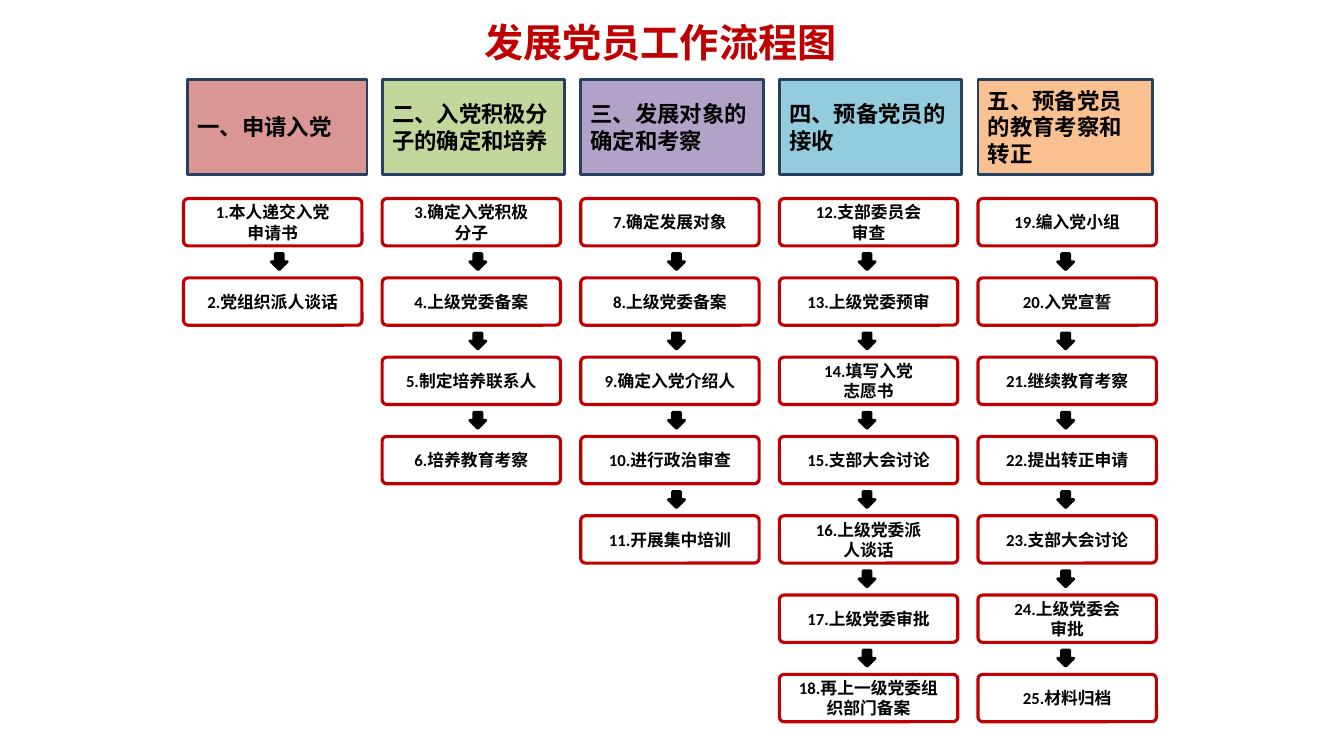
"""Draw the five-stage flow chart for developing party members."""
from lxml import etree
from pptx import Presentation
from pptx import util as u
from pptx.dml.color import RGBColor
from pptx.enum import shapes, text
from pptx.oxml.ns import qn

KIND = shapes.MSO_SHAPE
CJK = "Noto Sans CJK SC"


def write(shape, words, size, hue, face, align, anchor):
    frame = shape.text_frame
    frame.text = words
    form = {"word_wrap": True, "auto_size": text.MSO_AUTO_SIZE.NONE,
            "vertical_anchor": anchor}
    for key, value in form.items():
        setattr(frame, key, value)
    look = {"size": u.Pt(size), "bold": True, "name": face}
    for para in frame.paragraphs:
        para.alignment = align
        for run in para.runs:
            for key, value in look.items():
                setattr(run.font, key, value)
            run.font.color.rgb = RGBColor.from_string(hue)
            east = etree.SubElement(run.font._element, qn("a:ea"))
            east.set("typeface", CJK)


def draw(kind, box, fill, line, width):
    shape = slide.shapes.add_shape(kind, *[u.Inches(n) for n in box])
    shape.shadow.inherit = False
    shape.fill.solid()
    shape.fill.fore_color.rgb = RGBColor.from_string(fill)
    shape.line.color.rgb = RGBColor.from_string(line)
    shape.line.width = u.Pt(width)
    return shape


deck = Presentation()
deck.slide_width, deck.slide_height = u.Inches(13.33), u.Inches(7.5)
slide = deck.slides.add_slide(deck.slide_layouts[5])

title = slide.shapes.title
place = {"left": 3.05, "top": 0.13, "width": 7, "height": 0.94}
for key, value in place.items():
    setattr(title, key, u.Inches(value))
write(title, "发展党员工作流程图", 28, "C00000", CJK,
      text.PP_ALIGN.CENTER, text.MSO_ANCHOR.TOP)

stages = [
    ("一、申请入党", "D99694", 1.86, 1.78, 0.87,
     ["本人递交入党\n申请书", "党组织派人谈话"]),
    ("二、入党积极分子的确定和培养", "C3D69B", 3.79, 1.81, 0.87,
     ["确定入党积极\n分子", "上级党委备案", "制定培养联系人", "培养教育考察"]),
    ("三、发展对象的确定和考察", "B3A2C7", 5.76, 1.81, 0.87,
     ["确定发展对象", "上级党委备案", "确定入党介绍人", "进行政治审查",
      "开展集中培训"]),
    ("四、预备党员的接收", "93CDDD", 7.73, 1.81, 0.79,
     ["支部委员会\n审查", "上级党委预审", "填写入党\n志愿书", "支部大会讨论",
      "上级党委派\n人谈话", "上级党委审批", "再上一级党委组织部门备案"]),
    ("五、预备党员的教育考察和转正", "FAC090", 9.7, 1.73, 0.79,
     ["编入党小组", "入党宣誓", "继续教育考察", "提出转正申请",
      "支部大会讨论", "上级党委会\n审批", "材料归档"]),
]
first, pitch = 1.97, (6.69 - 1.97) / 6
count = 0
for col, (name, fill, left, width, shift, steps) in enumerate(stages):
    head = draw(KIND.RECTANGLE, (left, 0.79, width, 0.94), fill, "254061", 2)
    write(head, name, 16, "000000", "Calibri",
          text.PP_ALIGN.LEFT, text.MSO_ANCHOR.MIDDLE)
    x = 1.82 + 1.97 * col
    for row, step in enumerate(steps):
        y = first + pitch * row
        count += 1
        card = draw(KIND.ROUNDED_RECTANGLE, (x, y, 1.77, 0.47),
                    "FFFFFF", "C00000", 2.25)
        card.adjustments[0] = 0.1
        write(card, f"{count}.{step}", 12, "000000", "Calibri",
              text.PP_ALIGN.CENTER, text.MSO_ANCHOR.MIDDLE)
        if row:
            draw(KIND.DOWN_ARROW, (x + shift, y - 0.24, 0.16, 0.16),
                 "000000", "000000", 2)

deck.save("out.pptx")
